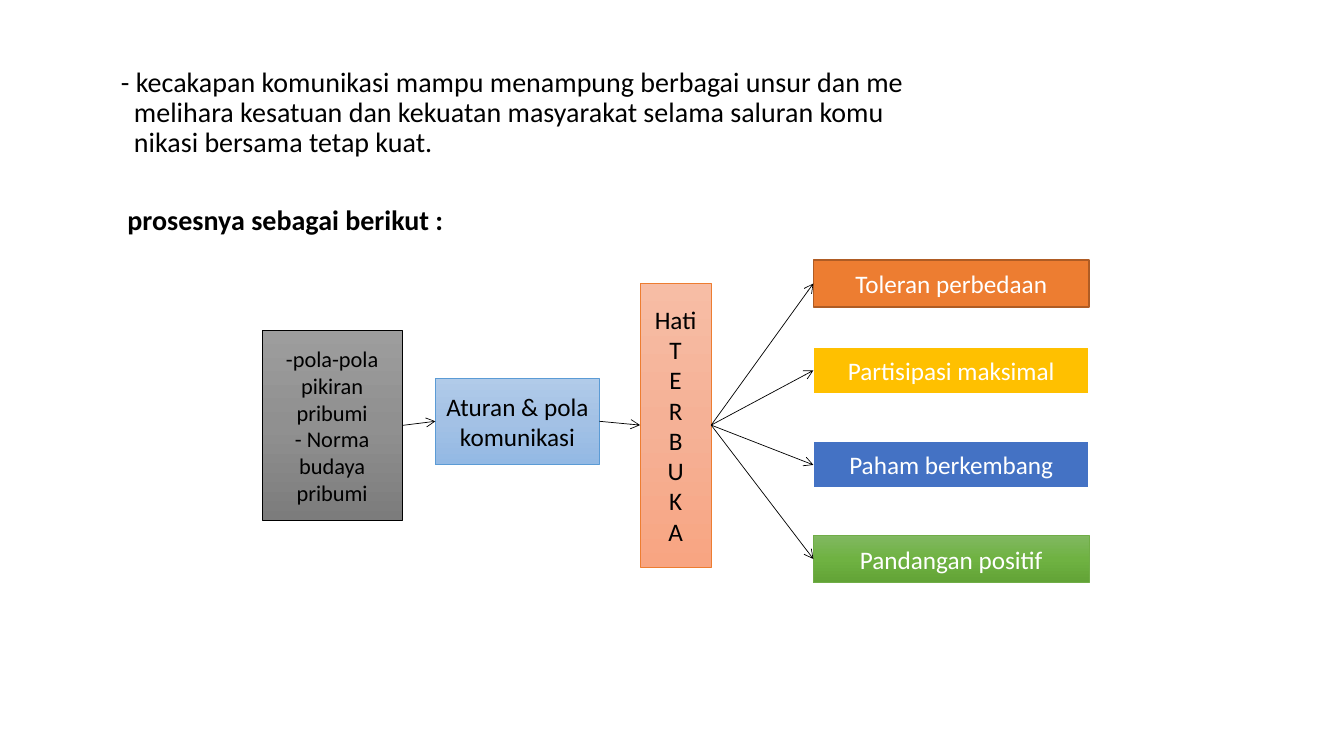
from copy import deepcopy
from dataclasses import dataclass

from pptx import Presentation
from pptx.dml.color import RGBColor as RGB
from pptx.enum.shapes import MSO_CONNECTOR as CONN, MSO_SHAPE as SHAPE
from pptx.enum.text import MSO_ANCHOR as ANCHOR, MSO_AUTO_SIZE as AUTO, PP_ALIGN as ALIGN
from pptx.oxml.ns import qn
from pptx.util import Pt


@dataclass(frozen=True)
class Theme:
    font: str = "Calibri"
    heading: int = 20
    label: int = 18
    small: int = 16
    black: str = "000000"
    white: str = "FFFFFF"
    gray: tuple = ("9D9D9D", "909090", "7C7C7C")
    sky: tuple = ("B1CBE9", "A3C1E5", "93B9E4")
    sky_line: str = "5B9BD5"
    peach: tuple = ("F7BDA5", "F5B196", "F8A582")
    orange: str = "ED7D31"
    orange_line: str = "AF5C24"
    gold: str = "FFC000"
    blue: str = "4472C4"
    green: tuple = ("81B861", "6FB242", "62A336")
    green_line: str = "70AD47"


T = Theme()
RIGHT_SITE, LEFT_SITE = 3, 1


def style_text(tf, size, color, align, bold=False):
    for p in tf.paragraphs:
        p.alignment = align
        for r in p.runs:
            r.font.name = T.font
            r.font.size = Pt(size)
            r.font.bold = bold
            r.font.color.rgb = RGB.from_string(color)


def set_heading(sp, text, box, margin, indent, anchor, bold=False):
    sp.left, sp.top, sp.width, sp.height = (Pt(v) for v in box)
    tf = sp.text_frame
    tf.text = text
    tf.word_wrap = True
    tf.auto_size = AUTO.NONE
    tf.vertical_anchor = anchor
    p = tf.paragraphs[0]
    p.line_spacing = 0.9
    pPr = p._p.get_or_add_pPr()
    pPr.set("marL", str(Pt(margin)))
    pPr.set("indent", str(Pt(indent)))
    style_text(tf, T.heading, T.black, ALIGN.LEFT, bold)


def set_fill(sp, fill):
    if isinstance(fill, str):
        sp.fill.solid()
        sp.fill.fore_color.rgb = RGB.from_string(fill)
        return
    sp.fill.gradient()
    sp.fill.gradient_angle = 270
    stops = sp._element.spPr.find(".//" + qn("a:gsLst"))
    stops.append(deepcopy(stops[0]))
    for i, (stop, color) in enumerate(zip(sp.fill.gradient_stops, fill)):
        stop.position = i / 2
        stop.color.rgb = RGB.from_string(color)


def add_box(s, text, box, fill, line, weight=0.5, size=T.label, color=T.black):
    sp = s.shapes.add_shape(SHAPE.RECTANGLE, *(Pt(v) for v in box))
    sp.shadow.inherit = False
    set_fill(sp, fill)
    sp.line.color.rgb = RGB.from_string(line)
    sp.line.width = Pt(weight)
    tf = sp.text_frame
    tf.text = text
    tf.word_wrap = True
    tf.vertical_anchor = ANCHOR.MIDDLE
    style_text(tf, size, color, ALIGN.CENTER)
    return sp


def add_arrow(s, source, target):
    cn = s.shapes.add_connector(CONN.STRAIGHT, 0, 0, 0, 0)
    cn.begin_connect(source, RIGHT_SITE)
    cn.end_connect(target, LEFT_SITE)
    cn.line.color.rgb = RGB.from_string(T.black)
    cn.line.width = Pt(0.5)
    ln = cn.line._get_or_add_ln()
    ln.append(ln.makeelement(qn("a:tailEnd"), {"type": "arrow"}))
    spPr = cn._element.spPr
    spPr.append(spPr.makeelement(qn("a:effectLst"), {}))


def main():
    prs = Presentation()
    prs.slide_width, prs.slide_height = Pt(960), Pt(540)
    s = prs.slides.add_slide(prs.slide_layouts[5])

    set_heading(
        s.shapes.title,
        "- kecakapan komunikasi mampu menampung berbagai unsur dan me\v"
        "melihara kesatuan dan kekuatan masyarakat selama saluran komu\v"
        "nikasi bersama tetap kuat.",
        (66, 29, 828, 104), 22.5, -9.3, ANCHOR.MIDDLE)
    set_heading(
        s.shapes.add_textbox(0, 0, 0, 0), "prosesnya sebagai berikut :",
        (66, 144, 828, 30), 18, 0, ANCHOR.TOP, bold=True)

    patterns = add_box(s, "-pola-pola pikiran pribumi\n- Norma budaya pribumi",
                       (187.2, 236.2, 100.1, 135.4), T.gray, T.black, size=T.small)
    rules = add_box(s, "Aturan & pola komunikasi",
                    (311, 270, 117.2, 61.9), T.sky, T.sky_line)
    open_heart = add_box(s, "\n".join(["Hati", *"TERBUKA"]),
                         (457.2, 202.3, 50.8, 202.7), T.peach, T.orange)
    add_arrow(s, patterns, rules)
    add_arrow(s, rules, open_heart)

    outcomes = [
        ("Toleran perbedaan", 185.6, T.orange, T.orange_line, 1),
        ("Partisipasi maksimal", 247.7, T.gold, T.white, 1.5),
        ("Paham berkembang", 315.2, T.blue, T.white, 1.5),
        ("Pandangan positif", 382.4, T.green, T.green_line, 0.5),
    ]
    for text, top, fill, line, weight in outcomes:
        outcome = add_box(s, text, (581, top, 197, 33.8), fill, line, weight, color=T.white)
        add_arrow(s, open_heart, outcome)

    prs.save("out.pptx")


if __name__ == "__main__":
    main()
